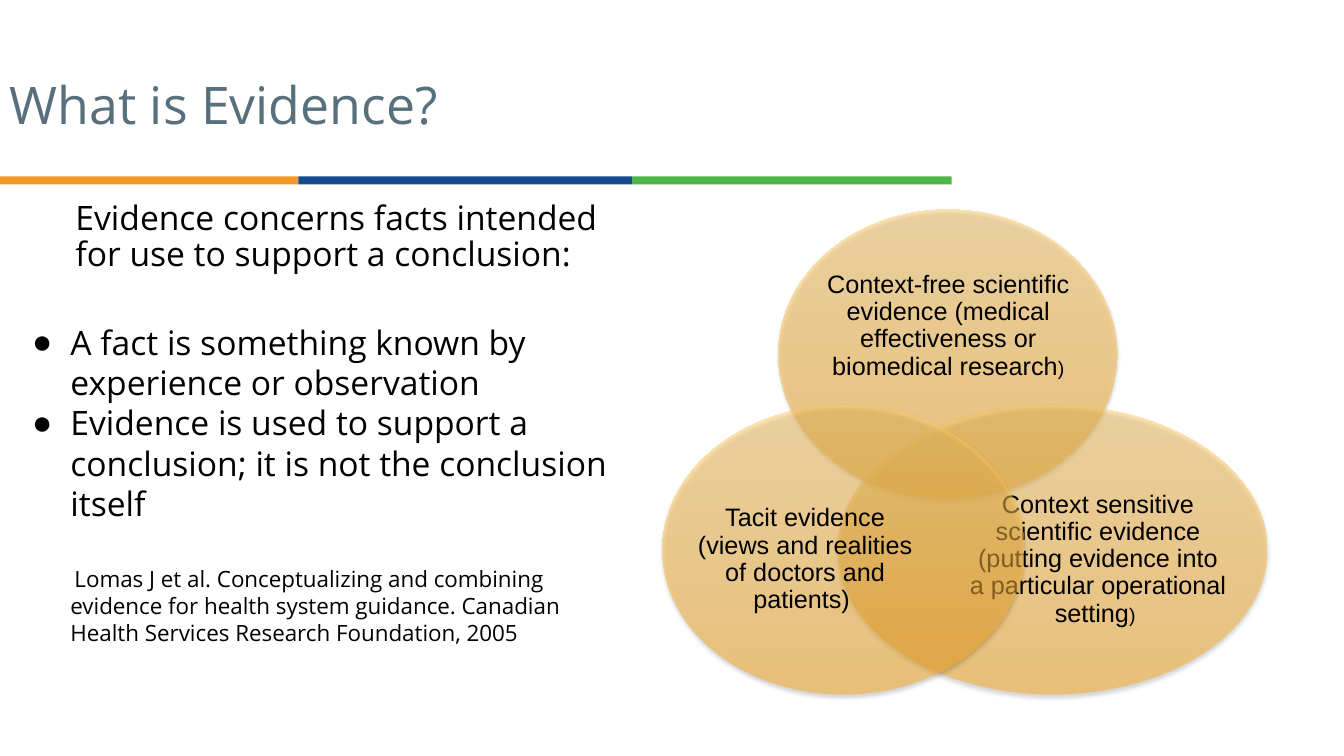
from lxml import etree
from pptx import Presentation
from pptx import util as u
from pptx.dml import color
from pptx.enum import shapes, text
from pptx.oxml import parse_xml
from pptx.oxml.ns import nsdecls, qn

Inches = u.Inches
ANCHORS = {"top": text.MSO_ANCHOR.TOP, "middle": text.MSO_ANCHOR.MIDDLE}

GLASS_FILL = f"""<a:gradFill {nsdecls("a")} rotWithShape="1"><a:gsLst>
<a:gs pos="0"><a:srgbClr val="FFAD22"><a:alpha val="50000"/></a:srgbClr></a:gs>
<a:gs pos="100000"><a:srgbClr val="FFCE6C"><a:alpha val="50000"/></a:srgbClr></a:gs>
</a:gsLst><a:lin ang="16200000" scaled="0"/></a:gradFill>"""
SOFT_SHADOW = f"""<a:effectLst {nsdecls("a")}>
<a:outerShdw blurRad="{u.Pt(3.1)}" dist="{u.Pt(1.8)}" dir="5400000" rotWithShape="0">
<a:srgbClr val="000000"><a:alpha val="35000"/></a:srgbClr></a:outerShdw></a:effectLst>"""


def rgb(value):
    return color.RGBColor.from_string(value)


def add_text_box(page, left, top, width, height, anchor="top", insets=(0.1, 0.05)):
    box = page.shapes.add_textbox(*map(Inches, (left, top, width, height)))
    frame = box.text_frame
    side, end = map(Inches, insets)
    settings = {"word_wrap": True, "vertical_anchor": ANCHORS[anchor],
                "margin_left": side, "margin_right": side,
                "margin_top": end, "margin_bottom": end}
    for name, value in settings.items():
        setattr(frame, name, value)
    return frame


def add_span(para, words, size, font="Open Sans", ink="000000"):
    span = para.add_run()
    span.text = words
    for name, value in {"name": font, "size": u.Pt(size)}.items():
        setattr(span.font, name, value)
    span.font.color.rgb = rgb(ink)


def set_indent(para, left, first, bullet=None):
    """Indent a paragraph in inches and give it a bullet if one is named."""
    properties = para._p.get_or_add_pPr()
    properties.set("marL", str(Inches(left)))
    properties.set("indent", str(Inches(first)))
    if bullet:
        tint = etree.SubElement(properties, qn("a:buClr"))
        etree.SubElement(tint, qn("a:srgbClr")).set("val", "000000")
        etree.SubElement(properties, qn("a:buFont")).set("typeface", "Arial")
        etree.SubElement(properties, qn("a:buChar")).set("char", bullet)


def add_title(page, left, top, width, height):
    frame = add_text_box(page, left, top, width, height, "middle")
    para = frame.paragraphs[0]
    para.line_spacing = 0.9
    add_span(para, "What is Evidence?", 37, ink="586F7C")


def add_stripe(page, left, top, height):
    """Draw the tricolour rule under the title."""
    for width, fill in ((2.96, "F49925"), (3.31, "154A90"), (3.17, "4EB748")):
        band = page.shapes.add_shape(shapes.MSO_SHAPE.RECTANGLE,
                                     *map(Inches, (left, top, width, height)))
        band.shadow.inherit = False
        band.fill.solid()
        band.fill.fore_color.rgb = rgb(fill)
        band.line.fill.background()
        left += width


def add_body(page, left, top, width, height):
    frame = add_text_box(page, left, top, width, height)
    # words, size, left indent, first-line indent, bullet, line spacing, space before
    rows = (
        ("Evidence concerns facts intended for use to support a conclusion:",
         24, 0.44, 0, None, 0.9, 0),
        ("A fact is something known by experience or observation",
         24, 0.39, -0.38, "●", 1.0, 34),
        ("Evidence is used to support a conclusion; it is not the conclusion itself",
         24, 0.39, -0.38, "●", 1.0, 0),
        ("Lomas J et al. Conceptualizing and combining evidence for health system "
         "guidance. Canadian Health Services Research Foundation, 2005",
         16, 0.39, 0.04, None, 1.0, 30),
    )
    for index, (words, size, indent, first, bullet, spacing, before) in enumerate(rows):
        para = frame.add_paragraph() if index else frame.paragraphs[0]
        para.line_spacing = spacing
        para.space_before = u.Pt(before)
        set_indent(para, indent, first, bullet)
        add_span(para, words, size)


def add_circle(page, oval, label, words, ending=""):
    """Draw one translucent oval and its label; the ending is set smaller."""
    circle = page.shapes.add_shape(shapes.MSO_SHAPE.OVAL, *map(Inches, oval))
    circle.line.fill.background()
    properties = circle._element.spPr
    outline = properties.find(qn("a:ln"))
    outline.addprevious(parse_xml(GLASS_FILL))
    outline.addnext(parse_xml(SOFT_SHADOW))

    para = add_text_box(page, *label, "middle", (0, 0)).paragraphs[0]
    para.alignment = text.PP_ALIGN.CENTER
    para.line_spacing = 0.9
    add_span(para, words, 18, "Arial")
    if ending:
        add_span(para, ending, 14, "Arial")


def add_venn(page, left, top):
    height, lower, label_top = 2.87, top + 1.94, top + 2.68
    add_circle(page, (left + 1.15, top, 3.36, height),
               (left + 1.6, top + 0.51, 2.47, 1.29),
               "Context-free scientific evidence (medical effectiveness or "
               "biomedical research", ")")
    add_circle(page, (left + 1.74, lower, 4.26, height),
               (left + 3.04, label_top, 2.56, 1.58),
               "Context sensitive scientific evidence (putting evidence into a "
               "particular operational setting", ") ")
    add_circle(page, (left, lower, 3.59, height),
               (left + 0.34, label_top, 2.15, 1.58),
               "Tacit evidence (views and realities of doctors and patients) ")


def main():
    deck = Presentation()
    deck.slide_width, deck.slide_height = Inches(13.33), Inches(7.5)
    page = deck.slides.add_slide(deck.slide_layouts[6])
    add_stripe(page, 0, 1.75, 0.08)
    add_title(page, 0, 0.48, 8.99, 1.18)
    add_body(page, 0.21, 1.95, 5.95, 4.95)
    add_venn(page, 6.57, 2.08)
    deck.save("out.pptx")


if __name__ == "__main__":
    main()
